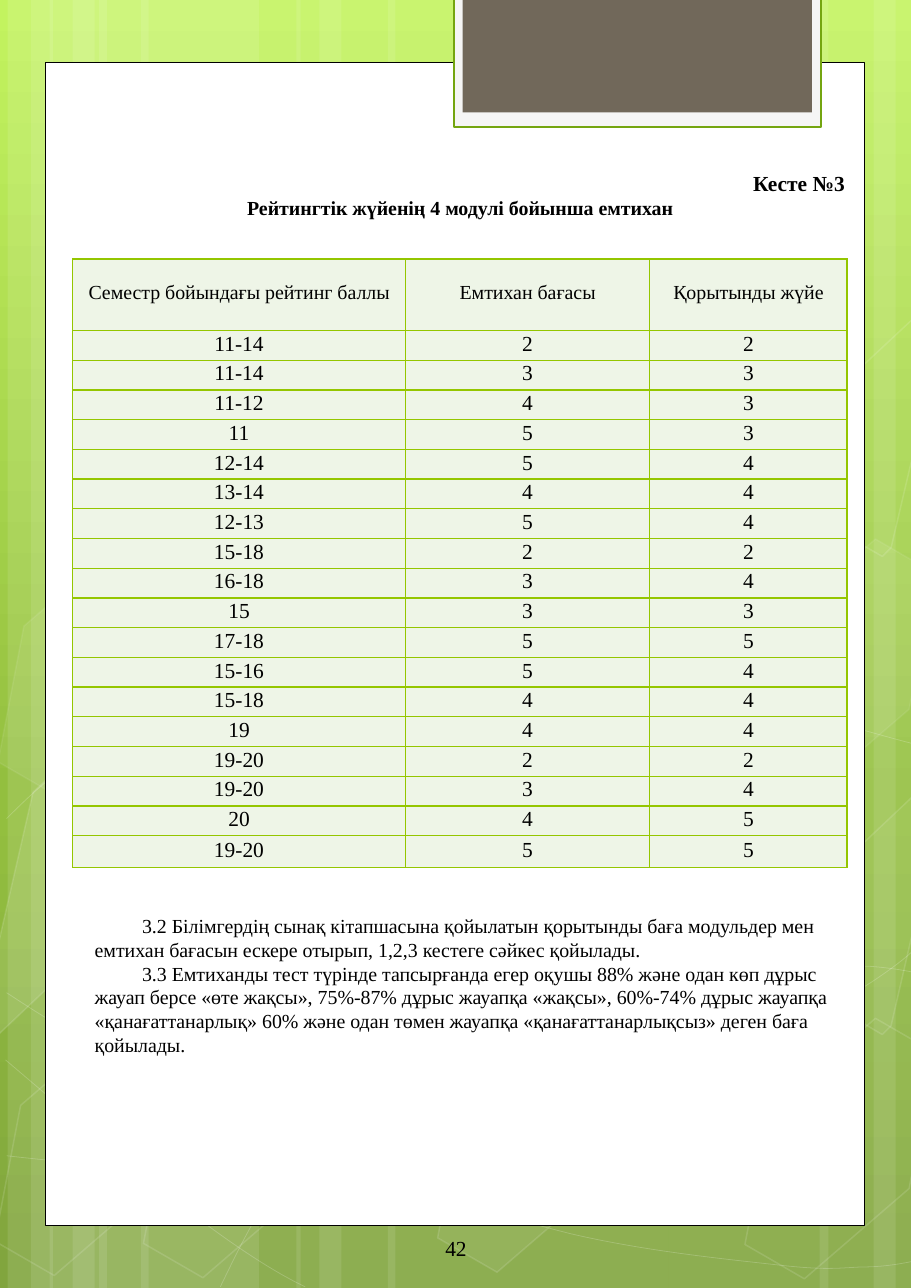
from copy import deepcopy
from dataclasses import dataclass

from lxml.etree import SubElement
from pptx import Presentation
from pptx.dml.color import RGBColor
from pptx.enum.shapes import MSO_SHAPE
from pptx.enum.text import MSO_ANCHOR, PP_ALIGN
from pptx.oxml.ns import qn
from pptx.util import Inches, Pt


@dataclass(frozen=True)
class Theme:
    font: str = "Times New Roman"
    text_size: float = 13
    large_size: float = 14
    row_spacing: float = 13.7
    black: str = "000000"
    white: str = "FFFFFF"
    frame_fill: str = "F5F5F5"
    frame_line: str = "74A510"
    tab_fill: str = "71685A"
    cell_fill: str = "EEF5E7"
    cell_line: str = "94C600"
    gradient: tuple = ((0, "C3F35F"), (0.62, "93BF3F"), (1, "81A53E"))


HEADERS = ["Семестр бойындағы рейтинг баллы", "Емтихан бағасы", "Қорытынды жүйе"]
RATINGS = [
    ("11-14", 2, 2), ("11-14", 3, 3), ("11-12", 4, 3), ("11", 5, 3),
    ("12-14", 5, 4), ("13-14", 4, 4), ("12-13", 5, 4), ("15-18", 2, 2),
    ("16-18", 3, 4), ("15", 3, 3), ("17-18", 5, 5), ("15-16", 5, 4),
    ("15-18", 4, 4), ("19", 4, 4), ("19-20", 2, 2), ("19-20", 3, 4),
    ("20", 4, 5), ("19-20", 5, 5),
]
RULES = [
    "3.2 Білімгердің сынақ кітапшасына қойылатын қорытынды баға модульдер мен "
    "емтихан бағасын ескере отырып, 1,2,3 кестеге сәйкес қойылады.",
    "3.3 Емтиханды тест түрінде тапсырғанда егер оқушы 88% және одан көп дұрыс "
    "жауап берсе «өте жақсы», 75%-87% дұрыс жауапқа «жақсы», 60%-74% дұрыс жауапқа "
    "«қанағаттанарлық» 60% және одан төмен жауапқа «қанағаттанарлықсыз» деген баға "
    "қойылады.",
]

# Left edge and width of each full-height stripe
STRIPES = [(0.9, 1.45), (0.07, 0.41), (0.28, 0.69), (1.28, 1.45), (0.45, 0.41),
           (0.66, 0.69), (6.07, 1.45), (7.93, 0.41), (7.44, 0.69), (3.52, 2.55),
           (2.69, 0.41), (2.9, 0.69)]
# Left, top, fill opacity and line opacity of each hexagon
HEXAGONS = [(2.76, 0.56, 4, 8), (4.11, 9.18, 6, 12), (0.09, 9.21, 0, 12),
            (0.12, 4.86, 7, 8), (0.77, 7.04, 0, 12), (1.44, 9.23, 0, 12),
            (0.79, 2.67, 0, 12), (6.23, 7.07, 10, 12), (6.9, 9.24, 0, 12),
            (6.9, 4.89, 7, 8)]
# Fill opacity and corners of the hexagons cut by the slide edge
CUT_HEXAGONS = [
    (10, [(0.3, 7.19), (0.44, 7.06), (1.07, 7.43), (0.79, 8.63), (-0.11, 9.48),
          (-0.21, 9.42)]),
    (4, [(7.66, 7.82), (8.56, 6.97), (8.62, 7.01), (8.09, 9.31), (8.01, 9.39),
         (7.38, 9.02)]),
    (0, [(7.66, 3.48), (8.56, 2.64), (8.63, 2.67), (8.09, 4.97), (8.01, 5.05),
         (7.38, 4.69)]),
]
# Bezier points: a start, then two controls and an end for each segment
CURVES = [
    [(0.06, 10.49), (0.51, 10.54), (0.95, 10.59), (1.57, 10.57), (2.19, 10.55),
     (2.96, 10.53), (3.79, 10.37), (4.61, 10.21), (5.79, 9.92), (6.55, 9.62),
     (7.3, 9.32), (8.08, 8.85), (8.33, 8.59)],
    [(0.06, 7.43), (0.3, 7.19), (0.54, 6.96), (1, 6.72), (1.47, 6.49), (2.14, 6.15),
     (2.87, 6.03), (3.61, 5.92), (4.5, 5.91), (5.41, 6.03), (6.32, 6.16),
     (7.83, 6.64), (8.33, 6.76)],
    [(0.05, 9.62), (1.05, 10.47), (2.04, 11.33), (2.77, 11.68)],
    [(0.06, 9.01), (0.32, 9.18), (0.58, 9.35), (1.06, 9.6), (1.54, 9.84),
     (2.26, 10.22), (2.95, 10.49), (3.64, 10.76), (4.51, 11.03), (5.19, 11.2),
     (5.88, 11.36), (6.61, 11.43), (7.05, 11.48), (7.49, 11.53), (7.6, 11.51),
     (7.81, 11.5), (8.03, 11.5), (8.18, 11.47), (8.33, 11.44)],
    [(2, 11.68), (2.15, 11.37), (2.3, 11.06), (2.5, 10.77), (2.7, 10.49),
     (2.98, 10.18), (3.21, 9.96), (3.44, 9.75), (3.58, 9.66), (3.88, 9.5),
     (4.19, 9.34), (4.74, 9.12), (5.03, 9.01), (5.32, 8.91), (5.37, 8.91),
     (5.62, 8.87), (5.88, 8.83), (6.28, 8.79), (6.57, 8.77), (6.85, 8.75),
     (7.33, 8.77), (7.33, 8.77), (7.51, 8.77), (7.7, 8.77), (7.88, 8.77),
     (8.03, 8.78), (8.17, 8.8), (8.32, 8.83)],
]


def bend(shape):
    """Join every three line points of a freeform into one Bezier segment."""
    lines = list(shape._element.iter(qn("a:lnTo")))
    for first in range(0, len(lines), 3):
        curve = lines[first].getparent()
        segment = SubElement(curve, qn("a:cubicBezTo"))
        for line in lines[first:first + 3]:
            segment.append(line[0])
            curve.remove(line)


def write_text(paragraph, text, theme, size, bold=False, align=PP_ALIGN.LEFT,
               indent=0, spacing=None):
    paragraph.alignment = align
    if indent:
        paragraph._p.get_or_add_pPr().set("indent", str(Inches(indent)))
    if spacing:
        paragraph.line_spacing = Pt(spacing)
    run = paragraph.add_run()
    run.text = text
    run.font.name, run.font.size, run.font.bold = theme.font, Pt(size), bold
    run.font.color.rgb = RGBColor.from_string(theme.black)


class Page:
    def __init__(self, slide, theme):
        self.slide, self.theme = slide, theme

    def background(self):
        fill = self.slide.background.fill
        fill.gradient()
        fill.gradient_angle = 270
        stops = next(self.slide._element.iter(qn("a:gsLst")))
        stops.append(deepcopy(stops[0]))
        for stop, (position, color) in zip(fill.gradient_stops, self.theme.gradient):
            stop.position = position
            stop.color.rgb = RGBColor.from_string(color)

    def style(self, shape, fill=None, line=None, width=1.0, fill_opacity=100,
              line_opacity=100):
        shape.shadow.inherit = False
        for target, color, opacity, xml_parent in (
                (shape.fill, fill, fill_opacity, "."),
                (shape.line.fill, line, line_opacity, "a:ln")):
            if not color or not opacity:
                target.background()
                continue
            target.solid()
            target.fore_color.rgb = RGBColor.from_string(color)
            if opacity < 100:
                found = shape._element.spPr.xpath(f"{xml_parent}/a:solidFill/a:srgbClr")
                SubElement(found[0], qn("a:alpha")).set("val", str(opacity * 1000))
        if line:
            shape.line.width = Pt(width)

    def shape(self, kind, box, rotation=0, **style):
        shape = self.slide.shapes.add_shape(kind, *map(Inches, box))
        shape.rotation = rotation
        self.style(shape, **style)
        return shape

    def outline(self, points, close=False, **style):
        start, *rest = [(Inches(x), Inches(y)) for x, y in points]
        builder = self.slide.shapes.build_freeform(*start)
        builder.add_line_segments(rest, close=close)
        shape = builder.convert_to_shape()
        self.style(shape, **style)
        return shape

    def text(self, box, paragraphs):
        frame = self.slide.shapes.add_textbox(*map(Inches, box)).text_frame
        frame.word_wrap = True
        frame.margin_left = frame.margin_right = Inches(0.11)
        frame.margin_top = frame.margin_bottom = Inches(0.06)
        for index, (text, style) in enumerate(paragraphs):
            paragraph = frame.add_paragraph() if index else frame.paragraphs[0]
            write_text(paragraph, text, self.theme, **style)

    def cell(self, cell, text, is_header):
        theme = self.theme
        cell.margin_left = cell.margin_right = Inches(0.08 if is_header else 0.01)
        cell.margin_top, cell.margin_bottom = Inches(0.21 if is_header else 0), 0
        cell.vertical_anchor = MSO_ANCHOR.TOP if is_header else MSO_ANCHOR.MIDDLE
        write_text(cell.text_frame.paragraphs[0], text, theme, align=PP_ALIGN.CENTER,
                   size=theme.text_size if is_header else theme.large_size,
                   spacing=None if is_header else theme.row_spacing)
        properties = cell._tc.get_or_add_tcPr()
        for side in ("a:lnL", "a:lnR", "a:lnT", "a:lnB"):
            border = SubElement(properties, qn(side), w=str(Pt(1)))
            SubElement(SubElement(border, qn("a:solidFill")), qn("a:srgbClr"),
                       val=theme.cell_line)
        cell.fill.solid()
        cell.fill.fore_color.rgb = RGBColor.from_string(theme.cell_fill)

    def table(self, box, rows, widths, heights):
        table = self.slide.shapes.add_table(
            len(rows), len(widths), *map(Inches, box)).table
        for column, width in zip(table.columns, widths):
            column.width = Inches(width)
        for index, (row, values) in enumerate(zip(table.rows, rows)):
            row.height = Inches(heights[index])
            for cell, value in zip(row.cells, values):
                self.cell(cell, str(value), is_header=index == 0)


def main():
    theme = Theme()
    presentation = Presentation()
    presentation.slide_width, presentation.slide_height = Inches(8.27), Inches(11.69)
    page = Page(presentation.slides.add_slide(presentation.slide_layouts[6]), theme)

    # Green backdrop with stripes, curves and hexagons
    page.background()
    for left, width in STRIPES:
        page.shape(MSO_SHAPE.RECTANGLE, (left, 0, width, 11.69), fill=theme.white,
                   fill_opacity=10)
    for points in CURVES:
        bend(page.outline(points, line=theme.white, width=0.5, line_opacity=20))
    for left, top, fill_opacity, line_opacity in HEXAGONS:
        hexagon = page.shape(MSO_SHAPE.HEXAGON, (left, top, 1.45, 2.37), rotation=30,
                             fill=theme.white, fill_opacity=fill_opacity,
                             line=theme.white, line_opacity=line_opacity)
        hexagon.adjustments[0] = 0.285
    for fill_opacity, corners in CUT_HEXAGONS:
        page.outline(corners, close=True, fill=theme.white, fill_opacity=fill_opacity,
                     line=theme.white, line_opacity=12)

    # White sheet and the tab at its top
    page.shape(MSO_SHAPE.RECTANGLE, (0.41, 0.57, 7.44, 10.55), fill=theme.white,
               line=theme.black, width=0.5)
    page.shape(MSO_SHAPE.RECTANGLE, (4.12, -0.04, 3.33, 1.19), fill=theme.frame_fill,
               line=theme.frame_line, width=1.25)
    page.shape(MSO_SHAPE.RECTANGLE, (4.2, -0.04, 3.17, 1.06), fill=theme.tab_fill)

    # Title, rating table, rules and page number
    page.text((0.57, 1.48, 7.21, 0.57), [
        ("Кесте №3", dict(size=theme.large_size, bold=True, align=PP_ALIGN.RIGHT)),
        ("Рейтингтік жүйенің 4 модулі бойынша емтихан",
         dict(size=theme.text_size, bold=True, align=PP_ALIGN.CENTER))])
    heights = [0.65] + [0.27] * (len(RATINGS) - 1) + [0.29]
    page.table((0.66, 2.35, 7.03, sum(heights)), [HEADERS, *RATINGS],
               (3.02, 2.22, 1.79), heights)
    page.text((0.75, 8.23, 7.03, 1.42),
              [(rule, dict(size=theme.text_size, indent=0.43)) for rule in RULES])
    page.text((3.66, 11.15, 0.96, 0.35),
              [("42", dict(size=theme.large_size, align=PP_ALIGN.CENTER))])

    presentation.save("out.pptx")


if __name__ == "__main__":
    main()
